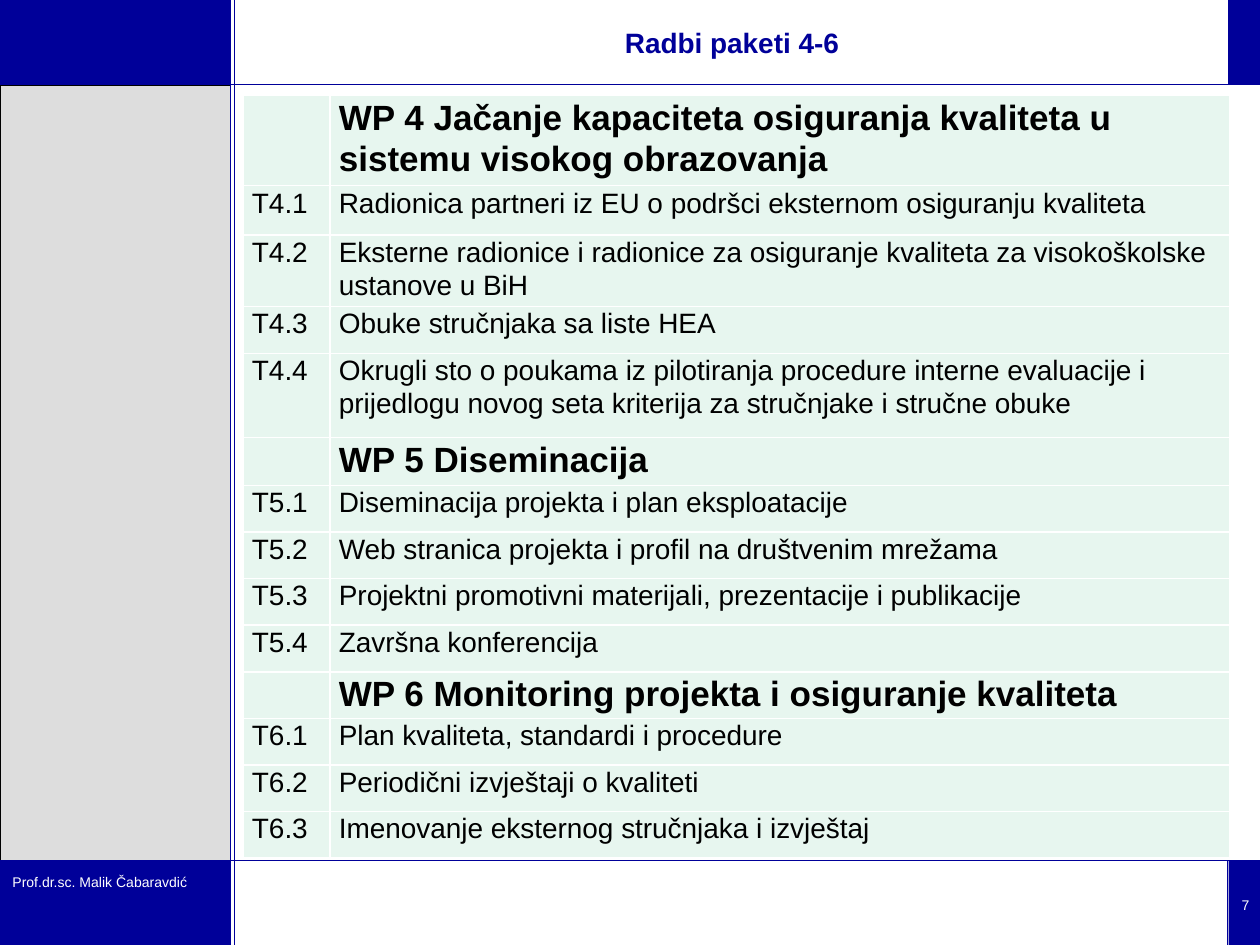
from lxml import etree
from pptx import Presentation
from pptx.dml.color import RGBColor
from pptx.enum.shapes import MSO_CONNECTOR, MSO_SHAPE
from pptx.enum.text import MSO_ANCHOR, PP_ALIGN
from pptx.oxml.ns import qn
from pptx.util import Inches, Pt

RECT = MSO_SHAPE.RECTANGLE
STRAIGHT = MSO_CONNECTOR.STRAIGHT
MIDDLE = MSO_ANCHOR.MIDDLE
LEFT, CENTER = PP_ALIGN.LEFT, PP_ALIGN.CENTER

NAVY, GREY, MINT, WHITE, BLACK = "000099", "DDDDDD", "E7F6EF", "FFFFFF", "000000"
WIDE, HIGH = 10, 7.5
SIDE, TOP, FOOT, EDGE = 1.83, 0.67, 6.83, 9.75

BLOCKS = [(0, 0, SIDE, TOP), (EDGE, 0, WIDE - EDGE, TOP),
          (0, FOOT, SIDE, TOP), (EDGE, FOOT, WIDE - EDGE, TOP)]
RULES = [(SIDE, HIGH, SIDE, 0), (0, FOOT, WIDE, FOOT), (0, TOP, WIDE, TOP),
         (1.86, HIGH, 1.86, 0), (9.74, HIGH, 9.74, FOOT), (EDGE, TOP, EDGE, 0)]
ROWS = [
    ("", "WP 4 Jačanje kapaciteta osiguranja kvaliteta u sistemu visokog obrazovanja", 0.67),
    ("T4.1", "Radionica partneri iz EU o podršci eksternom osiguranju kvaliteta", 0.39),
    ("T4.2", "Eksterne radionice i radionice za osiguranje kvaliteta za visokoškolske "
             "ustanove u BiH", 0.52),
    ("T4.3", "Obuke stručnjaka sa liste HEA", 0.37),
    ("T4.4", "Okrugli sto o poukama iz pilotiranja procedure interne evaluacije i "
             "prijedlogu novog seta kriterija za stručnjake i stručne obuke", 0.67),
    ("", "WP 5 Diseminacija", 0.38),
    ("T5.1", "Diseminacija projekta i plan eksploatacije", 0.37),
    ("T5.2", "Web stranica projekta i profil na društvenim mrežama", 0.37),
    ("T5.3", "Projektni promotivni materijali, prezentacije i publikacije", 0.37),
    ("T5.4", "Završna konferencija", 0.37),
    ("", "WP 6 Monitoring projekta i osiguranje kvaliteta", 0.37),
    ("T6.1", "Plan kvaliteta, standardi i procedure", 0.37),
    ("T6.2", "Periodični izvještaji o kvaliteti", 0.37),
    ("T6.3", "Imenovanje eksternog stručnjaka i izvještaj", 0.37),
]


def paint(target, color):
    """Set a solid colour on a fill."""
    target.solid()
    target.fore_color.rgb = RGBColor.from_string(color)


def write(frame, text, size, color, bold=False, align=LEFT):
    """Put one styled paragraph in a text frame and return it."""
    frame.text = text
    frame.word_wrap = True
    para = frame.paragraphs[0]
    para.alignment = align
    for font in [para.font] + [run.font for run in para.runs]:
        font.name, font.size, font.bold = "Arial", Pt(size), bold
        font.color.rgb = RGBColor.from_string(color)
    return para


def add_block(slide, box, color, edge=None):
    """Draw a filled rectangle with an optional outline."""
    shape = slide.shapes.add_shape(RECT, *map(Inches, box))
    shape.shadow.inherit = False
    paint(shape.fill, color)
    if edge:
        paint(shape.line.fill, edge)
        shape.line.width = Pt(0.75)
    else:
        shape.line.fill.background()


def add_rule(slide, ends):
    """Draw a thin navy line."""
    line = slide.shapes.add_connector(STRAIGHT, *map(Inches, ends))
    paint(line.line.fill, NAVY)
    line.line.width = Pt(0.75)
    etree.SubElement(line._element.spPr, qn("a:effectLst"))


def add_label(slide, box, text, align=LEFT):
    """Add a small white footer text."""
    label = slide.shapes.add_textbox(*map(Inches, box))
    write(label.text_frame, text, 8, WHITE, align=align)


def set_title(slide, text):
    """Place and format the title."""
    title = slide.shapes.title
    title.left, title.top, title.width, title.height = map(Inches, (1.85, 0, 7.92, TOP))
    title.text_frame.vertical_anchor = MIDDLE
    write(title.text_frame, text, 16, NAVY, True, CENTER)


def add_border(cell):
    """Give a cell white borders ahead of its fill."""
    props = cell._tc.get_or_add_tcPr()
    for spot, side in enumerate(("lnL", "lnR", "lnT", "lnB")):
        line = etree.Element(qn("a:" + side), w=str(Pt(1)))
        fill = etree.SubElement(line, qn("a:solidFill"))
        etree.SubElement(fill, qn("a:srgbClr"), val=WHITE)
        props.insert(spot, line)


def fill_cell(cell, text, head):
    """Write and format one table cell."""
    cell.margin_left = cell.margin_right = Inches(0.07)
    cell.margin_top = cell.margin_bottom = 0
    para = write(cell.text_frame, text, 20 if head else 16, BLACK, head)
    para.line_spacing = 1.07
    paint(cell.fill, MINT)
    add_border(cell)


def add_tasks(slide):
    """Build the table of work packages and tasks."""
    high = sum(row[2] for row in ROWS)
    box = map(Inches, (1.93, 0.76, 7.83, high))
    table = slide.shapes.add_table(len(ROWS), 2, *box).table
    table.first_row = table.horz_banding = False
    for col, width in zip(table.columns, (0.69, 7.14)):
        col.width = Inches(width)
    for row, (code, name, height) in zip(table.rows, ROWS):
        row.height = Inches(height)
        for cell, text in zip(row.cells, (code, name)):
            fill_cell(cell, text, not code)


def main():
    """Build the slide and save it."""
    deck = Presentation()
    deck.slide_width, deck.slide_height = Inches(WIDE), Inches(HIGH)
    slide = deck.slides.add_slide(deck.slide_layouts[5])
    paint(slide.background.fill, WHITE)
    add_block(slide, (0, 0.68, SIDE, 6.15), GREY, BLACK)
    for box in BLOCKS:
        add_block(slide, box, NAVY)
    for ends in RULES:
        add_rule(slide, ends)
    add_label(slide, (0, 6.88, 1.79, 0.23), "Prof.dr.sc. Malik Čabaravdić")
    add_label(slide, (9.61, 7.07, 0.55, 0.23), "7", CENTER)
    set_title(slide, "Radbi paketi 4-6")
    add_tasks(slide)
    deck.save("out.pptx")


if __name__ == "__main__":
    main()
